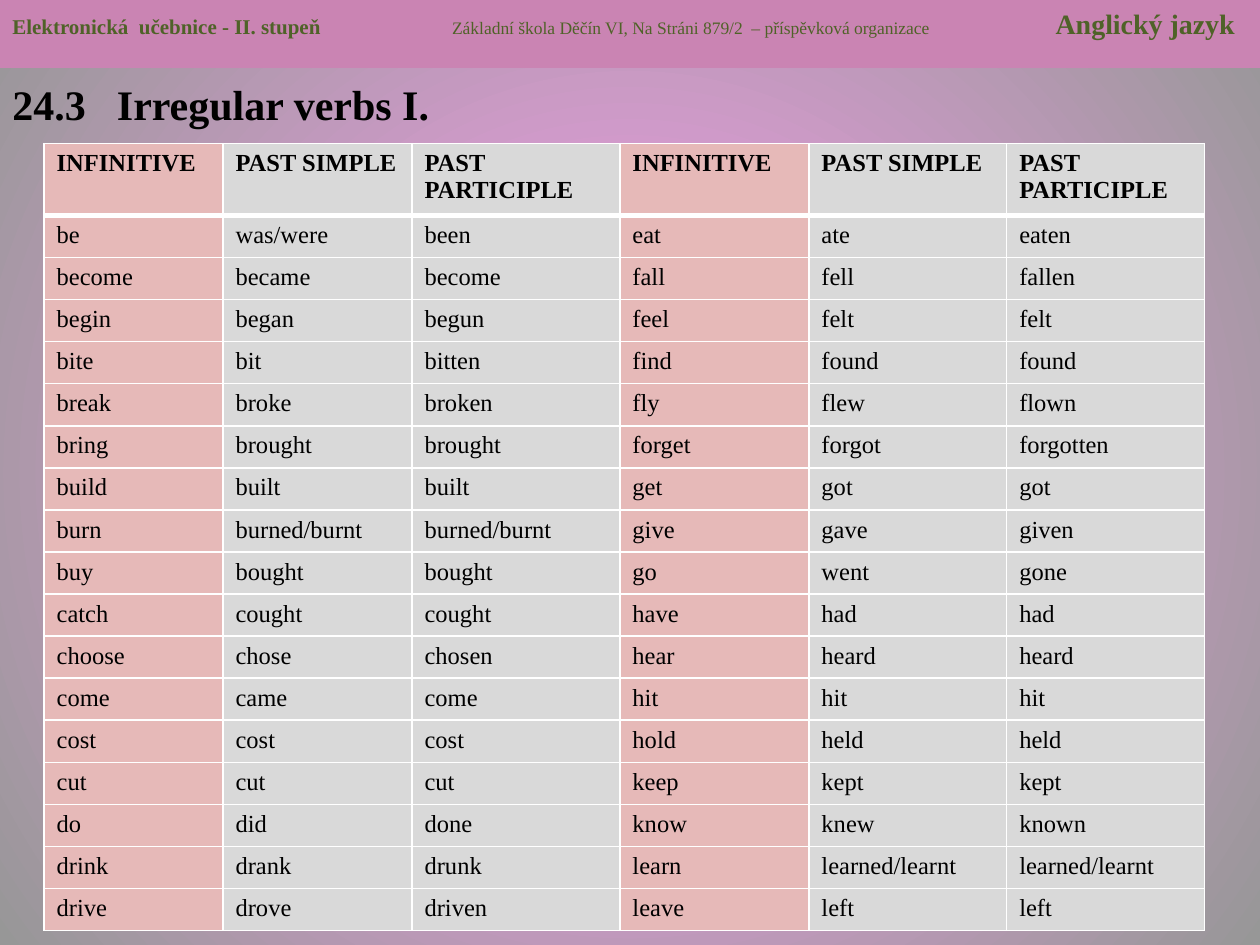
from typing import NamedTuple

from pptx import Presentation
from pptx.dml.color import RGBColor
from pptx.enum.shapes import MSO_SHAPE
from pptx.enum.text import MSO_ANCHOR, PP_ALIGN
from pptx.oxml import parse_xml
from pptx.oxml.ns import nsdecls
from pptx.util import Inches, Pt

RECT = MSO_SHAPE.RECTANGLE
TOP = MSO_ANCHOR.TOP
LEFT = PP_ALIGN.LEFT
FONT = "Times New Roman"
BLACK, WHITE, GREEN = "000000", "FFFFFF", "4F6228"
PINK, GREY, MAUVE = "E6B9B8", "D9D9D9", "CA84B3"
COL_WIDTHS = (1.42, 1.5, 1.65, 1.5, 1.57, 1.57)
HEADER_H, TABLE_H = 0.57, 6.24
HEADINGS = ("INFINITIVE", "PAST SIMPLE", "PAST PARTICIPLE")


class Verb(NamedTuple):
    infinitive: str
    past: str
    participle: str


VERBS = [Verb(*line.split()) for line in """\
be was/were been
become became become
begin began begun
bite bit bitten
break broke broken
bring brought brought
build built built
burn burned/burnt burned/burnt
buy bought bought
catch cought cought
choose chose chosen
come came come
cost cost cost
cut cut cut
do did done
drink drank drunk
drive drove driven
eat ate eaten
fall fell fallen
feel felt felt
find found found
fly flew flown
forget forgot forgotten
get got got
give gave given
go went gone
have had had
hear heard heard
hit hit hit
hold held held
keep kept kept
know knew known
learn learned/learnt learned/learnt
leave left left""".splitlines()]


def rgb(value: str) -> RGBColor:
    return RGBColor.from_string(value)


def add_text(p, text: str, size: float = 14, color: str = BLACK, bold: bool = False) -> None:
    r = p.add_run()
    r.text = text
    r.font.name = FONT
    r.font.size = Pt(size)
    r.font.bold = bold
    r.font.color.rgb = rgb(color)


def set_tabs(p, *stops: float) -> None:
    tabs = "".join(f'<a:tab pos="{Inches(x)}" algn="l"/>' for x in stops)
    p._p.get_or_add_pPr().append(parse_xml(f'<a:tabLst {nsdecls("a")}>{tabs}</a:tabLst>'))


def set_background(s) -> None:
    stops = "".join(f'<a:gs pos="{pos}"><a:srgbClr val="{color}"/></a:gs>'
                    for pos, color in ((0, "FA9CEF"), (100000, "979797")))
    s._element.cSld.insert(0, parse_xml(
        f'<p:bg {nsdecls("p", "a")}><p:bgPr><a:gradFill rotWithShape="1">'
        f'<a:gsLst>{stops}</a:gsLst><a:path path="circle">'
        '<a:fillToRect l="50000" t="50000" r="50000" b="50000"/></a:path>'
        '</a:gradFill><a:effectLst/></p:bgPr></p:bg>'))


def add_title(s) -> None:
    tf = s.shapes.add_textbox(0, Inches(0.54), Inches(10), Inches(6.96)).text_frame
    tf.word_wrap = True
    tf.margin_top = Inches(0.08)
    p = tf.paragraphs[0]
    set_tabs(p, 0.83)
    add_text(p, "24.3\tIrregular verbs I.", size=24, bold=True)


def add_banner(s) -> None:
    sp = s.shapes.add_shape(RECT, 0, 0, Inches(10), Inches(0.54))
    sp.shadow.inherit = False
    sp.fill.solid()
    sp.fill.fore_color.rgb = rgb(MAUVE)
    sp.line.fill.background()
    tf = sp.text_frame
    tf.word_wrap = True
    tf.vertical_anchor = TOP
    p = tf.paragraphs[0]
    p.alignment = LEFT
    set_tabs(p, 3.49, 8.28)
    add_text(p, "Elektronická  učebnice - II. stupeň\t", size=12, color=GREEN, bold=True)
    add_text(p, "Základní škola Děčín VI, Na Stráni 879/2  – příspěvková organizace\t",
             size=10, color=GREEN)
    add_text(p, "Anglický jazyk", size=16, color=GREEN, bold=True)


def set_borders(cell, top: float, bottom: float) -> None:
    tcPr = cell._tc.get_or_add_tcPr()
    for i, (side, width) in enumerate((("L", 1), ("R", 1), ("T", top), ("B", bottom))):
        tcPr.insert(i, parse_xml(
            f'<a:ln{side} {nsdecls("a")} w="{Pt(width)}"><a:solidFill>'
            f'<a:srgbClr val="{WHITE}"/></a:solidFill></a:ln{side}>'))


def add_verb_table(s) -> None:
    half = len(VERBS) // 2
    rows = [HEADINGS * 2] + [a + b for a, b in zip(VERBS[:half], VERBS[half:])]
    table = s.shapes.add_table(len(rows), len(COL_WIDTHS), Inches(0.35), Inches(1.14),
                               Inches(sum(COL_WIDTHS)), Inches(TABLE_H)).table
    for col, width in zip(table.columns, COL_WIDTHS):
        col.width = Inches(width)
    for i, words in enumerate(rows):
        table.rows[i].height = Inches((TABLE_H - HEADER_H) / half if i else HEADER_H)
        for j, word in enumerate(words):
            cell = table.cell(i, j)
            cell.fill.solid()
            cell.fill.fore_color.rgb = rgb(GREY if j % len(HEADINGS) else PINK)
            set_borders(cell, top=3 if i == 1 else 1, bottom=1 if i else 3)
            add_text(cell.text_frame.paragraphs[0], word, bold=i == 0)


def main() -> None:
    prs = Presentation()
    prs.slide_width, prs.slide_height = Inches(10), Inches(7.5)
    s = prs.slides.add_slide(prs.slide_layouts[6])
    set_background(s)
    add_title(s)
    add_banner(s)
    add_verb_table(s)
    prs.save("out.pptx")


if __name__ == "__main__":
    main()
